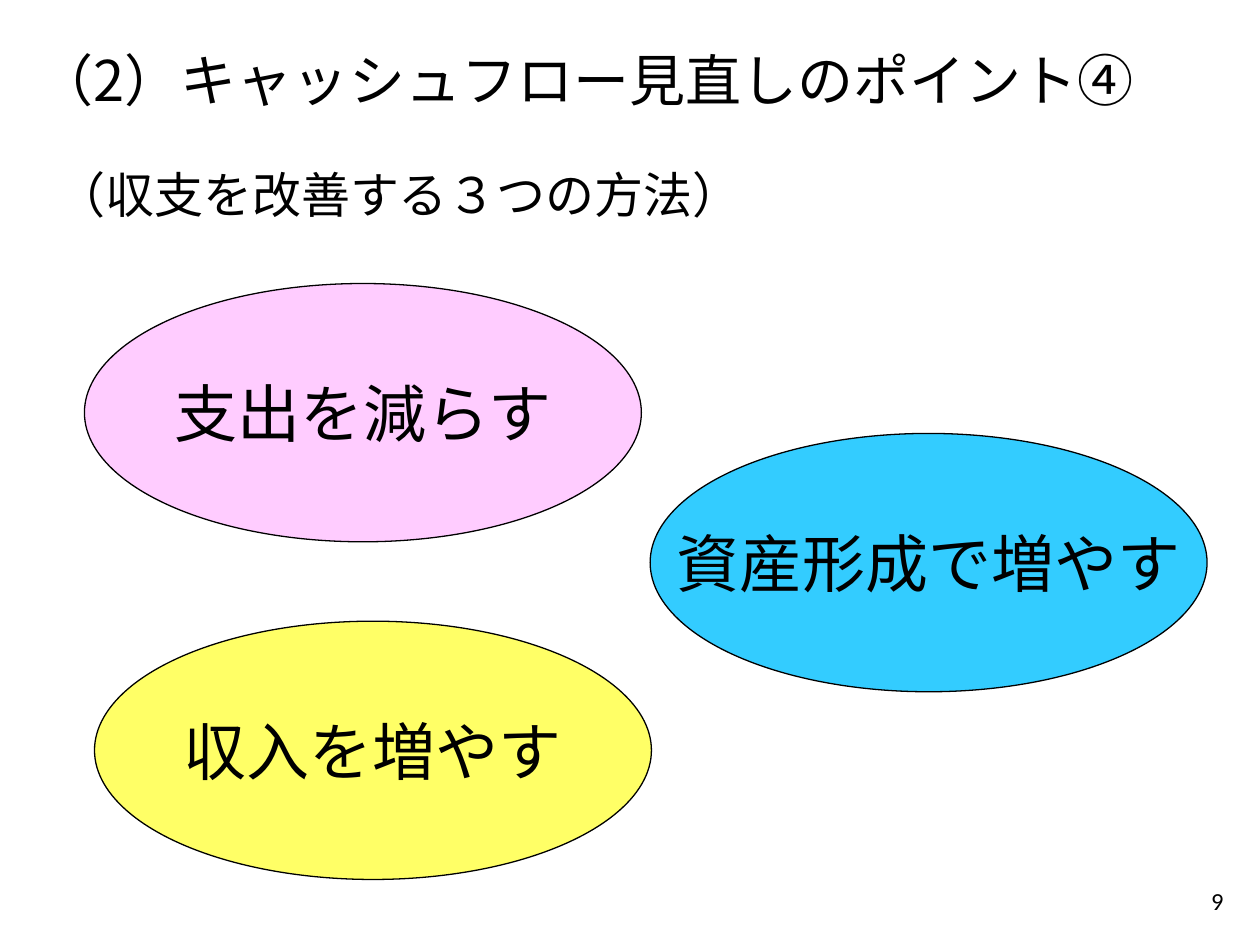
import pptx
import pptx.dml.color
import pptx.enum.shapes
import pptx.enum.text
import pptx.oxml.ns
import pptx.util
from lxml import etree
from pptx.util import Inches, Pt

BLACK = pptx.dml.color.RGBColor(0x00, 0x00, 0x00)
PINK = pptx.dml.color.RGBColor(0xFF, 0xCC, 0xFF)
YELLOW = pptx.dml.color.RGBColor(0xFF, 0xFF, 0x66)
BLUE = pptx.dml.color.RGBColor(0x33, 0xCC, 0xFF)
JAPANESE_FONT = "Noto Sans CJK JP"
ALIGN = pptx.enum.text.PP_ALIGN


def format_paragraph(paragraph, size, font_name, alignment):
    paragraph.alignment = alignment
    paragraph.font.size = Pt(size)
    paragraph.font.color.rgb = BLACK
    paragraph.font.name = font_name
    if font_name == JAPANESE_FONT:
        properties = paragraph.font._element
        east_asian = etree.SubElement(properties, pptx.oxml.ns.qn("a:ea"))
        east_asian.set("typeface", font_name)


def add_text_box(slide, left, top, width, height):
    box = slide.shapes.add_textbox(Inches(left), Inches(top), Inches(width), Inches(height))
    box.text_frame.word_wrap = True
    box.text_frame.vertical_anchor = pptx.enum.text.MSO_ANCHOR.MIDDLE
    return box.text_frame.paragraphs[0]


presentation = pptx.Presentation()
presentation.slide_width = Inches(10)
presentation.slide_height = Inches(7.5)
slide = presentation.slides.add_slide(presentation.slide_layouts[5])

title = slide.shapes.title
title.left, title.top = Inches(0.2), Inches(0.36)
title.width, title.height = Inches(9.06), Inches(0.64)
title.text_frame.text = "（2）キャッシュフロー見直しのポイント④"
title.text_frame.auto_size = pptx.enum.text.MSO_AUTO_SIZE.NONE
title.text_frame.vertical_anchor = pptx.enum.text.MSO_ANCHOR.MIDDLE
title_paragraph = title.text_frame.paragraphs[0]
title_paragraph.line_spacing = 0.8
format_paragraph(title_paragraph, 32, JAPANESE_FONT, ALIGN.LEFT)

subtitle = add_text_box(slide, 0.35, 1.16, 8.62, 0.82)
subtitle.line_spacing = 0.9
format_paragraph(subtitle, 28, "Calibri", ALIGN.LEFT)
for text, font_name in [
    ("（収支を改善する", "Calibri"),
    ("３つ", "Arial"),
    ("の方法）", "Calibri"),
]:
    run = subtitle.add_run()
    run.text = text
    run.font.name = font_name

for text, left, top, color in [
    ("支出を減らす", 0.67, 2.25, PINK),
    ("収入を増やす", 0.75, 4.93, YELLOW),
    ("資産形成で増やす", 5.16, 3.44, BLUE),
]:
    ellipse = slide.shapes.add_shape(
        pptx.enum.shapes.MSO_SHAPE.OVAL,
        Inches(left), Inches(top), Inches(4.42), Inches(2.05),
    )
    ellipse.shadow.inherit = False
    ellipse.fill.solid()
    ellipse.fill.fore_color.rgb = color
    ellipse.line.color.rgb = BLACK
    ellipse.line.width = Pt(0.75)
    ellipse.text_frame.text = text
    ellipse.text_frame.word_wrap = False
    ellipse.text_frame.vertical_anchor = pptx.enum.text.MSO_ANCHOR.MIDDLE
    format_paragraph(ellipse.text_frame.paragraphs[0], 36, JAPANESE_FONT, ALIGN.CENTER)

page_number = add_text_box(slide, 7.56, 6.95, 2.25, 0.4)
page_number.text = "9"
format_paragraph(page_number, 14, "Calibri", ALIGN.RIGHT)

presentation.save("out.pptx")
